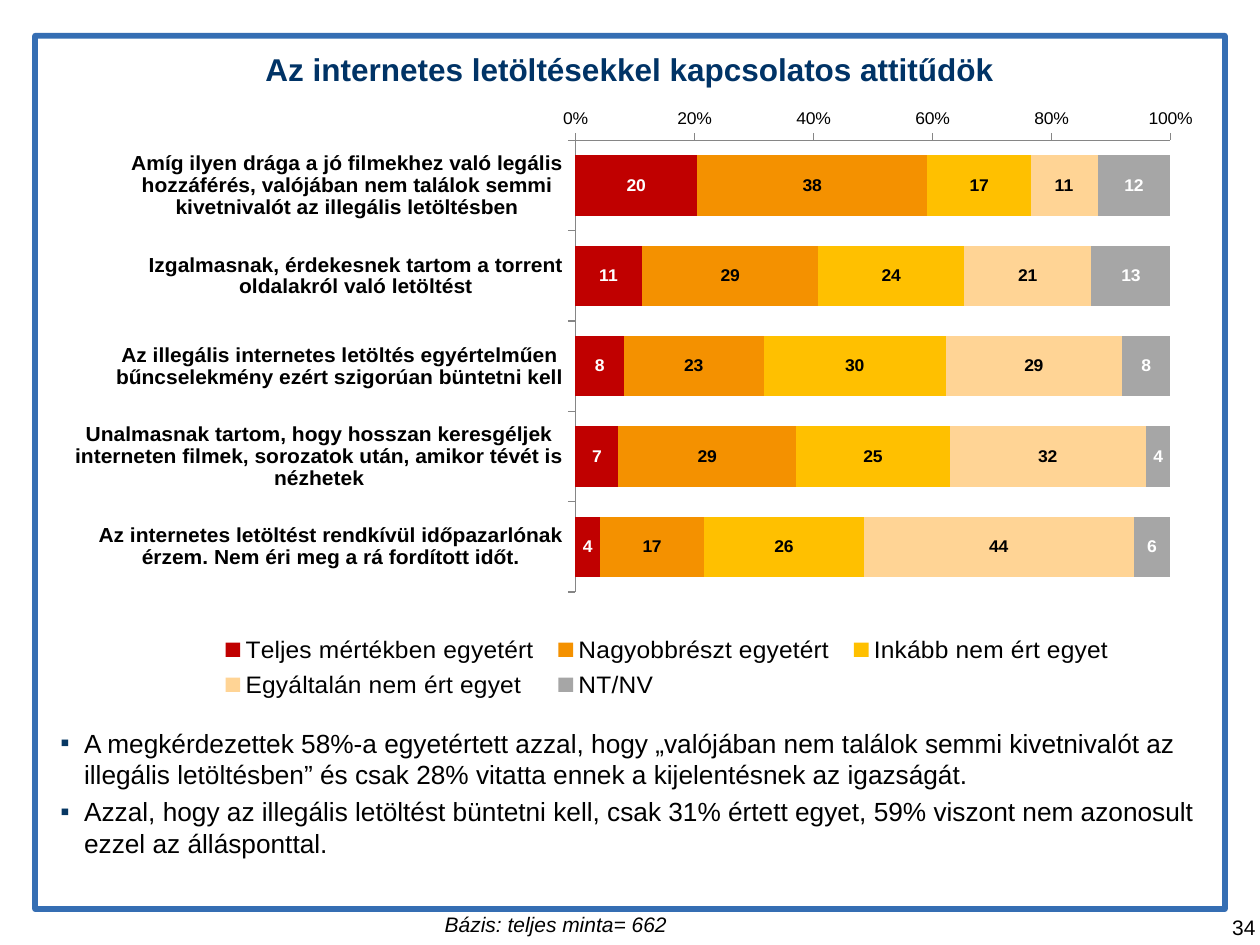
from dataclasses import dataclass

from lxml.etree import SubElement
from pptx import Presentation
from pptx.chart.data import CategoryChartData
from pptx.dml.color import RGBColor as RGB
from pptx.enum.chart import (XL_AXIS_CROSSES as Crosses, XL_CHART_TYPE as ChartType,
                             XL_LABEL_POSITION as LabelPos, XL_LEGEND_POSITION as LegendPos,
                             XL_TICK_MARK as Tick)
from pptx.enum.shapes import MSO_SHAPE as Shape
from pptx.enum.text import MSO_ANCHOR as Anchor, PP_ALIGN as Align
from pptx.oxml import parse_xml
from pptx.oxml.ns import nsdecls, qn
from pptx.util import Pt


@dataclass(frozen=True)
class Theme:
    font: str = "Arial"
    title: str = "003366"
    frame: str = "094FA3"
    bullet: str = "073763"
    axis: str = "868686"
    dark: str = "000000"
    light: str = "FFFFFF"
    title_size: float = 18
    body_size: float = 15
    legend_size: float = 14
    small_size: float = 12
    label_size: float = 10


CATEGORIES = [
    "Amíg ilyen drága a jó filmekhez való legális hozzáférés, valójában nem találok semmi "
    "kivetnivalót az illegális letöltésben",
    "Izgalmasnak, érdekesnek tartom a torrent oldalakról való letöltést",
    "Az illegális internetes letöltés egyértelműen bűncselekmény ezért szigorúan büntetni kell",
    "Unalmasnak tartom, hogy hosszan keresgéljek interneten filmek, sorozatok után, "
    "amikor tévét is nézhetek",
    "Az internetes letöltést rendkívül időpazarlónak érzem. Nem éri meg a rá fordított időt.",
]
SERIES = [
    ("Teljes mértékben egyetért", (20, 11, 8, 7, 4), "C00000", "light"),
    ("Nagyobbrészt egyetért", (38, 29, 23, 29, 17), "F49100", "dark"),
    ("Inkább nem ért egyet", (17, 24, 30, 25, 26), "FFC000", "dark"),
    ("Egyáltalán nem ért egyet", (11, 21, 29, 32, 44), "FFD495", "dark"),
    ("NT/NV", (12, 13, 8, 4, 6), "A6A6A6", "light"),
]
FINDINGS = [
    "A megkérdezettek 58%-a egyetértett azzal, hogy „valójában nem találok semmi kivetnivalót az "
    "illegális letöltésben” és csak 28% vitatta ennek a kijelentésnek az igazságát.",
    "Azzal, hogy az illegális letöltést büntetni kell, csak 31% értett egyet, 59% viszont nem "
    "azonosult ezzel az állásponttal.",
]


class SlideBuilder:
    """Adds styled elements to the current slide."""

    def __init__(self, prs, theme):
        self.theme = theme
        self.s = prs.slides.add_slide(prs.slide_layouts[5])

    def style(self, font, size, color=None, **fmt):
        fmt = {"name": self.theme.font, "size": Pt(size), "bold": False, **fmt}
        for key, value in fmt.items():
            setattr(font, key, value)
        font.color.rgb = RGB.from_string(color or self.theme.dark)

    def place(self, sp, box):
        for key, value in zip(("left", "top", "width", "height"), box):
            setattr(sp, key, Pt(value))

    def add_run(self, p, text, size, color=None, **fmt):
        r = p.add_run()
        r.text = text
        self.style(r.font, size, color, **fmt)

    def frame(self, box):
        sp = self.s.shapes.add_shape(Shape.RECTANGLE, *map(Pt, box))
        sp.shadow.inherit = False
        sp.fill.background()
        sp.line.width = Pt(3.25)
        sp.line.color.rgb = RGB.from_string(self.theme.frame)
        color = sp._element.spPr.find(".//" + qn("a:srgbClr"))
        SubElement(color, qn("a:alpha"), val="81000")

    def title(self, text, box):
        sp = self.s.shapes.title
        self.place(sp, box)
        tf = sp.text_frame
        tf.word_wrap = True
        tf.vertical_anchor = Anchor.MIDDLE
        for side, inset in {"left": 6, "top": 0, "right": 0, "bottom": 0}.items():
            setattr(tf, f"margin_{side}", Pt(inset))
        p = tf.paragraphs[0]
        p.alignment = Align.CENTER
        self.add_run(p, text, self.theme.title_size, self.theme.title, bold=True)

    def text(self, text, box, align=Align.LEFT, wrap=True, **fmt):
        tf = self.s.shapes.add_textbox(*map(Pt, box)).text_frame
        tf.word_wrap = wrap
        p = tf.paragraphs[0]
        p.alignment = align
        self.add_run(p, text, self.theme.small_size, **fmt)

    def bullets(self, items, box):
        tf = self.s.shapes.add_textbox(*map(Pt, box)).text_frame
        tf.word_wrap = True
        for i, item in enumerate(items):
            p = tf.add_paragraph() if i else tf.paragraphs[0]
            pPr = p._p.get_or_add_pPr()
            pPr.set("marL", str(Pt(13.5)))
            pPr.set("indent", str(-Pt(13.5)))
            color = SubElement(pPr, qn("a:buClr"))
            SubElement(color, qn("a:srgbClr"), val=self.theme.bullet)
            SubElement(pPr, qn("a:buFont"), typeface=self.theme.font)
            SubElement(pPr, qn("a:buChar"), char="▪")
            p.space_before = Pt(3 if i else 0)
            self.add_run(p, item, self.theme.body_size)

    def layout(self, x, y, w, h, inner=False):
        target = '<c:layoutTarget val="inner"/>' if inner else ""
        modes = '<c:xMode val="edge"/><c:yMode val="edge"/>'
        sizes = "".join(f'<c:{k} val="{v}"/>' for k, v in zip("xywh", (x, y, w, h)))
        return parse_xml(f'<c:layout {nsdecls("c")}><c:manualLayout>{target}{modes}{sizes}'
                         '</c:manualLayout></c:layout>')

    def axis(self, axis, size, **fmt):
        axis.has_major_gridlines = False
        axis.major_tick_mark = Tick.OUTSIDE
        axis.minor_tick_mark = Tick.NONE
        axis.format.line.color.rgb = RGB.from_string(self.theme.axis)
        self.style(axis.tick_labels.font, size, **fmt)

    def chart(self, categories, series, box):
        t = self.theme
        data = CategoryChartData()
        data.categories = categories
        for name, values, *_ in series:
            data.add_series(name, values)
        chart = self.s.shapes.add_chart(ChartType.BAR_STACKED_100, *map(Pt, box), data).chart
        self.style(chart.font, t.title_size)
        chart.has_title = False
        cat, val, plot = chart.category_axis, chart.value_axis, chart.plots[0]
        self.axis(cat, t.small_size, bold=True)
        cat.reverse_order = True
        cat.crosses = Crosses.MAXIMUM
        self.axis(val, t.label_size)
        for key, value in {"minimum_scale": 0, "maximum_scale": 1, "major_unit": 0.2}.items():
            setattr(val, key, value)
        val.tick_labels.number_format = "0%"
        val.tick_labels.number_format_is_linked = False
        for key, value in {"gap_width": 50, "overlap": 100, "vary_by_categories": False}.items():
            setattr(plot, key, value)
        for ser, (_, _, color, label) in zip(plot.series, series):
            ser.format.fill.solid()
            ser.format.fill.fore_color.rgb = RGB.from_string(color)
            labels = ser.data_labels
            labels.show_value = True
            labels.position = LabelPos.CENTER
            self.style(labels.font, t.label_size, getattr(t, label), bold=True)
        chart.has_legend = True
        legend = chart.legend
        legend.position = LegendPos.BOTTOM
        legend.include_in_layout = False
        self.style(legend.font, t.legend_size)
        legend_xml = legend._element
        for old in legend_xml.findall(qn("c:layout")):
            legend_xml.remove(old)
        legend_xml.find(qn("c:legendPos")).addnext(self.layout(0.13, 0.83, 0.8, 0.13))
        area = chart._chartSpace.chart.plotArea
        for old in area.findall(qn("c:layout")):
            area.remove(old)
        area.insert(0, self.layout(0.45, 0.02, 0.52, 0.75, inner=True))


def main():
    prs = Presentation()
    prs.slide_width, prs.slide_height = Pt(720), Pt(540)
    b = SlideBuilder(prs, Theme())
    b.frame((20, 20.5, 680, 499))
    b.text("34", (677, 519, 47.5, 19.5), align=Align.RIGHT)
    b.chart(CATEGORIES, SERIES, (34.5, 62.5, 654, 355))
    b.title("Az internetes letöltésekkel kapcsolatos attitűdök", (101.5, 18, 510.5, 42.5))
    b.text("Bázis: teljes minta= 662", (247, 517.5, 142.5, 21.5), wrap=False, italic=True)
    b.bullets(FINDINGS, (27.5, 412, 667.5, 83))
    prs.save("out.pptx")


if __name__ == "__main__":
    main()
